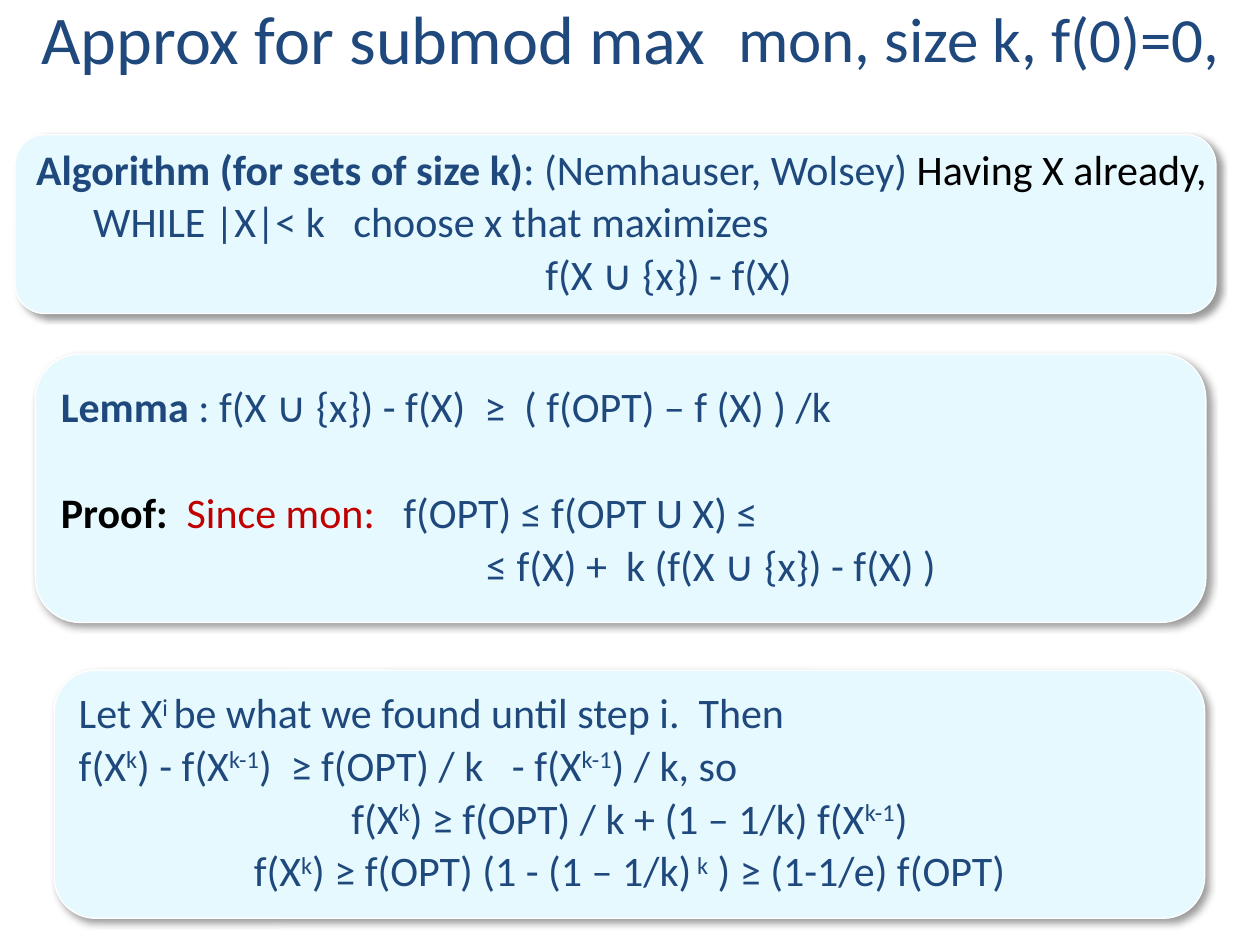
from lxml.etree import SubElement
from pptx import Presentation
from pptx.dml.color import RGBColor
from pptx.enum.shapes import MSO_SHAPE
from pptx.enum.text import MSO_ANCHOR, MSO_AUTO_SIZE, PP_ALIGN
from pptx.oxml.ns import qn
from pptx.util import Pt

NAVY = RGBColor(0x1F, 0x49, 0x7D)
BLACK = RGBColor(0, 0, 0)
RED = RGBColor(0xC0, 0, 0)
WHITE = RGBColor(255, 255, 255)
PALE = RGBColor(0xE6, 0xF9, 0xFE)
FONT = "Calibri"
GAP = 4.2  # space before a line
SKIP = 35  # space before a new part


def place(shape, box):
    shape.left, shape.top, shape.width, shape.height = map(Pt, box)


def head(shape, box, text, size):
    """Place one centred heading line in its box."""
    place(shape, box)
    frame = shape.text_frame
    frame.text = text
    frame.auto_size = MSO_AUTO_SIZE.NONE
    para = frame.paragraphs[0]
    para.alignment = PP_ALIGN.CENTER
    para.font.name, para.font.size = FONT, Pt(size)
    para.font.color.rgb = NAVY
    return frame


def shade(shape):
    """Add a soft shadow to the lower right."""
    shape.shadow.inherit = False
    effects = shape._element.spPr.find(qn("a:effectLst"))
    outer = SubElement(effects, qn("a:outerShdw"), blurRad=str(Pt(4)),
                       dist=str(Pt(3)), dir=str(45 * 60000),
                       algn="tl", rotWithShape="0")
    color = SubElement(outer, qn("a:srgbClr"), val="000000")
    SubElement(color, qn("a:alpha"), val="40000")


def write(para, text, color=NAVY, bold=False):
    """Add text; parts between ^ marks are raised."""
    for i, part in enumerate(text.split("^")):
        if not part:
            continue
        run = para.add_run()
        run.text = part
        run.font.color.rgb = color
        run.font.bold = bold
        if i % 2:
            run._r.get_or_add_rPr().set("baseline", "30000")


def card(slide, box, lines):
    """Draw a card; a line is (parts, indent or None for centred, gap)."""
    shape = slide.shapes.add_shape(MSO_SHAPE.ROUNDED_RECTANGLE,
                                   *map(Pt, box))
    shape.fill.solid()
    shape.fill.fore_color.rgb = PALE
    shape.line.color.rgb = WHITE
    shape.line.width = Pt(0.75)
    shade(shape)
    frame = shape.text_frame
    frame.word_wrap = False
    frame.vertical_anchor = MSO_ANCHOR.MIDDLE
    for i, (parts, indent, gap) in enumerate(lines):
        para = frame.add_paragraph() if i else frame.paragraphs[0]
        para.alignment = PP_ALIGN.CENTER if indent is None else PP_ALIGN.LEFT
        if indent:
            para._p.get_or_add_pPr().set("marL", str(Pt(indent)))
        para.line_spacing = 0.9
        para.space_before = Pt(gap)
        para.font.name, para.font.size = FONT, Pt(24)
        for part in parts:
            write(para, *part)


def main():
    deck = Presentation()
    deck.slide_width, deck.slide_height = Pt(720), Pt(540)
    slide = deck.slides.add_slide(deck.slide_layouts[5])

    title = head(slide.shapes.title, (-132.5, -25.9, 692, 94.3),
                 "Approx for submod max", 39)
    title.vertical_anchor = MSO_ANCHOR.MIDDLE

    card(slide, (8.64, 77, 686.2, 102.2), [
        ([("Algorithm (for sets of size k)", NAVY, True),
          (": (Nemhauser, Wolsey) ",),
          ("Having X already,", BLACK)], 0, GAP),
        ([("WHILE |X|< k   choose x that maximizes",)], 32.6, GAP),
        ([("f(X ∪ {x}) - f(X)",)], 291, GAP),
    ])
    card(slide, (20.2, 202.3, 668.9, 153.4), [
        ([("Lemma ", NAVY, True),
          (": f(X ∪ {x}) - f(X)  ≥  ( f(OPT) – f (X) ) /k",)], 0, GAP),
        ([("Proof:  ", BLACK, True), ("Since mon:   ", RED),
          ("f(OPT) ≤ f(OPT U X) ≤",)], 0, SKIP),
        ([("≤ f(X) +  k (f(X ∪ {x}) - f(X) )",)], 243, GAP),
    ])
    card(slide, (31, 383, 657.4, 141.8), [
        ([("Let X^i ^be what we found until step i.  Then",)], 0, GAP),
        ([("f(X^k^) - f(X^k-1^)  ≥ f(OPT) / k   - f(X^k-1^) / k, so",)],
         0, GAP),
        ([("f(X^k^) ≥ f(OPT) / k + (1 – 1/k) f(X^k-1^)",)], None, GAP),
        ([("f(X^k^) ≥ f(OPT) (1 - (1 – 1/k)^ k^ ) ≥ (1-1/e) f(OPT)",)],
         None, GAP),
    ])

    box = (413.3, -3.6, 292.3, 51.1)
    note = slide.shapes.add_textbox(*map(Pt, box))
    head(note, box, "mon, size k, f(0)=0,", 36).word_wrap = False

    deck.save("out.pptx")


if __name__ == "__main__":
    main()
